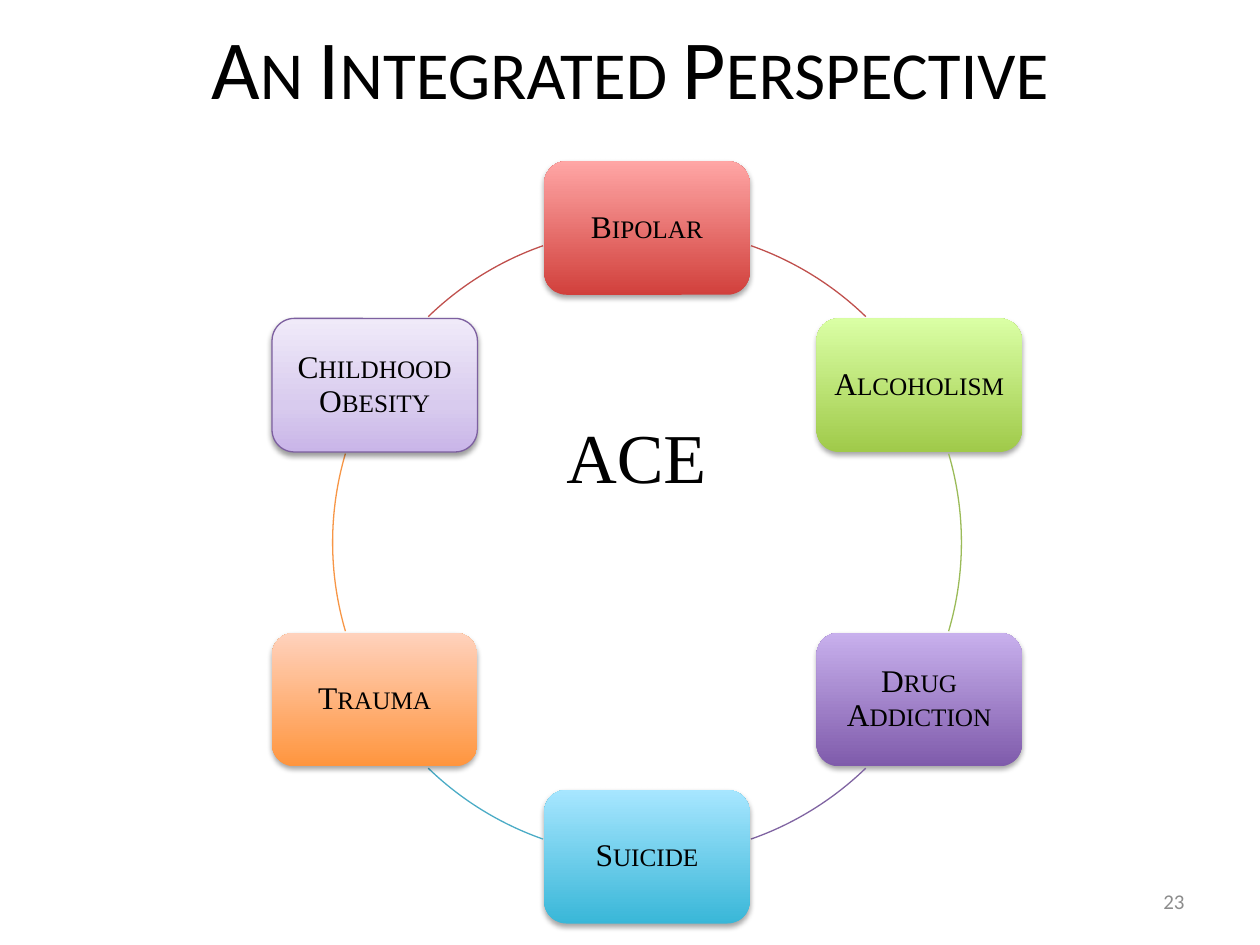
from math import cos, radians, sin

from lxml.etree import SubElement
from pptx import Presentation
from pptx.dml.color import RGBColor
from pptx.enum.shapes import MSO_SHAPE
from pptx.enum.text import MSO_ANCHOR, PP_ALIGN
from pptx.oxml.ns import qn
from pptx.util import Inches, Pt

COLORS = {
    "text": "000000",
    "number": "8C8C8C",
    "red": "C0504D",
    "green": "9BBB59",
    "purple": "8064A2",
    "aqua": "4BACC6",
    "orange": "F79646",
    "outline": "7D60A0",
}
HEADING_FONT, BODY_FONT = "Calibri", "Times New Roman"

CENTER_X, CENTER_Y, RADIUS = 5.135, 4.305, 2.495
NODE_W, NODE_H = 1.63, 1.06

# Label, gradient stops from bottom to top, outline, then the arc that
# follows the node: colour, start and end angle (clockwise from the right).
CYCLE = [
    ("Bipolar", [(0, "D1403C"), (100, "FFA6A5")], None, "red", 289.3, 314.1),
    ("Alcoholism", [(0, "A0CA4A"), (100, "DAFFA5")], None, "green", 343.6, 16.4),
    ("Drug Addiction", [(0, "7F5BAB"), (100, "C8B0ED")], None, "purple", 45.9, 70.7),
    ("Suicide", [(0, "39B7D8"), (100, "A7E6FF")], None, "aqua", 109.3, 134.1),
    ("Trauma", [(0, "FF953E"), (100, "FFD2BD")], None, "orange", 163.6, 196.4),
    ("Childhood Obesity", [(0, "C9B5E8"), (35, "D8CBEE"), (100, "F0EAF9")],
     "outline", "red", 225.9, 250.7),
]


def rgb(name):
    return RGBColor.from_string(COLORS[name])


def add_color(parent, value):
    color = SubElement(parent, qn("a:srgbClr"))
    color.set("val", value)
    return color


class CycleSlide:
    """Holds the style and the slide being built."""

    def __init__(self, slide):
        self.slide = slide

    def add_words(self, paragraph, words, size, font, color="text",
                  align=PP_ALIGN.CENTER, small_caps=False):
        paragraph.alignment = align
        run = paragraph.add_run()
        run.text = words
        run.font.size = Pt(size)
        run.font.name = font
        run.font.color.rgb = rgb(color)
        if small_caps:
            run.font._element.set("cap", "small")

    def title(self, words, left, top, width, height):
        heading = self.slide.shapes.title
        heading.left, heading.top = Inches(left), Inches(top)
        heading.width, heading.height = Inches(width), Inches(height)
        frame = heading.text_frame
        frame.vertical_anchor = MSO_ANCHOR.MIDDLE
        paragraph = frame.paragraphs[0]
        self.add_words(paragraph, words, 48, HEADING_FONT, small_caps=True)
        paragraph.add_line_break()
        paragraph.font.size = Pt(48)

    def text(self, words, left, top, width, height, size, font,
             anchor=MSO_ANCHOR.MIDDLE, inset_top=0.05, **style):
        box = self.slide.shapes.add_textbox(
            Inches(left), Inches(top), Inches(width), Inches(height))
        frame = box.text_frame
        frame.word_wrap = True
        frame.vertical_anchor = anchor
        frame.margin_top = Inches(inset_top)
        self.add_words(frame.paragraphs[0], words, size, font, **style)

    def gradient(self, shape, stops):
        """Fill upwards, from the first stop at the bottom."""
        shape.fill.gradient()
        shape.fill.gradient_angle = 90
        stop_list = shape._element.spPr.find(".//" + qn("a:gsLst"))
        for stop in list(stop_list):
            stop_list.remove(stop)
        for percent, color in stops:
            stop = SubElement(stop_list, qn("a:gs"))
            stop.set("pos", str(percent * 1000))
            add_color(stop, color)

    def drop_shadow(self, shape, opacity):
        shape.shadow.inherit = False
        effects = shape._element.spPr.find(qn("a:effectLst"))
        shadow = SubElement(effects, qn("a:outerShdw"))
        for key, value in (("blurRad", Pt(3.1)), ("dist", Pt(1.8)),
                           ("dir", 90 * 60000), ("rotWithShape", 0)):
            shadow.set(key, str(int(value)))
        alpha = SubElement(add_color(shadow, "000000"), qn("a:alpha"))
        alpha.set("val", str(opacity * 1000))

    def node(self, label, angle, stops, outline):
        x = CENTER_X + RADIUS * cos(radians(angle))
        y = CENTER_Y + RADIUS * sin(radians(angle))
        card = self.slide.shapes.add_shape(
            MSO_SHAPE.ROUNDED_RECTANGLE, Inches(x - NODE_W / 2),
            Inches(y - NODE_H / 2), Inches(NODE_W), Inches(NODE_H))
        self.gradient(card, stops)
        if outline:
            card.line.color.rgb = rgb(outline)
            card.line.width = Pt(0.75)
        else:
            card.line.fill.background()
        self.drop_shadow(card, 38 if outline else 35)
        frame = card.text_frame
        frame.word_wrap = True
        frame.vertical_anchor = MSO_ANCHOR.MIDDLE
        frame.margin_left = frame.margin_right = Inches(0.07)
        frame.margin_top = frame.margin_bottom = Inches(0.07)
        paragraph = frame.paragraphs[0]
        paragraph.line_spacing = 0.9
        self.add_words(paragraph, label, 18, BODY_FONT, small_caps=True)

    def arc(self, color, start, end):
        link = self.slide.shapes.add_shape(
            MSO_SHAPE.ARC, Inches(CENTER_X - RADIUS), Inches(CENTER_Y - RADIUS),
            Inches(2 * RADIUS), Inches(2 * RADIUS))
        # Angles are stored in 60000ths of a degree, adjustments in 100000ths.
        link.adjustments[0] = start * 0.6
        link.adjustments[1] = end * 0.6
        link.fill.background()
        link.line.color.rgb = rgb(color)
        link.line.width = Pt(0.75)
        link.shadow.inherit = False


def main():
    deck = Presentation()
    deck.slide_width, deck.slide_height = Inches(10), Inches(7.5)
    page = CycleSlide(deck.slides.add_slide(deck.slide_layouts[5]))

    page.title("An Integrated Perspective", 0.5, 0.3, 9, 1.25)
    page.text("ACE", 0.55, 1.75, 9, 4.95, 40, BODY_FONT,
              anchor=MSO_ANCHOR.TOP, inset_top=1.53)
    for index, (label, stops, outline, color, start, end) in enumerate(CYCLE):
        page.node(label, -90 + index * 360 / len(CYCLE), stops, outline)
        page.arc(color, start, end)
    page.text("23", 7.17, 6.95, 2.33, 0.4, 12, HEADING_FONT,
              color="number", align=PP_ALIGN.RIGHT)

    deck.save("out.pptx")


if __name__ == "__main__":
    main()
